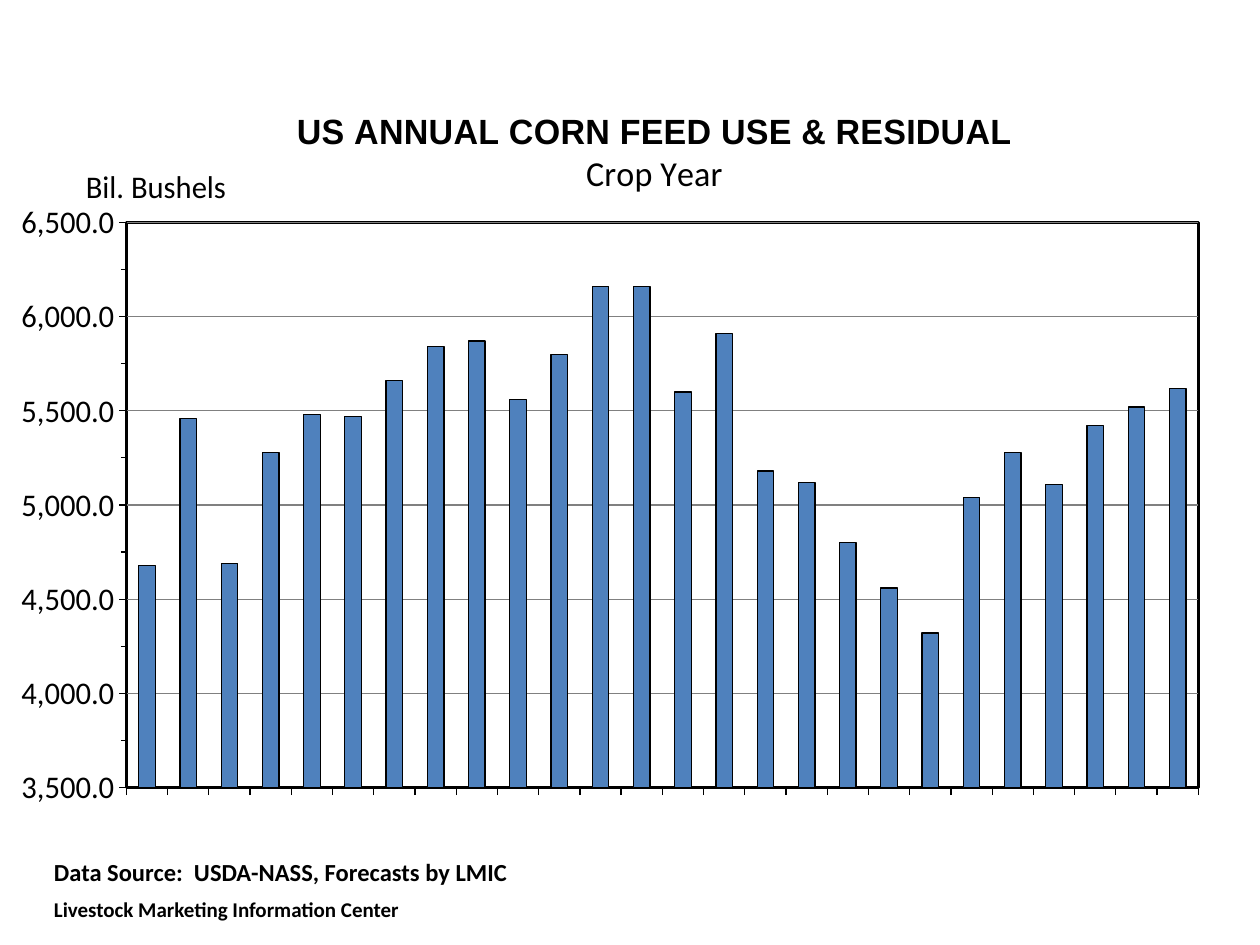
from lxml.etree import SubElement
from pptx import Presentation
from pptx.chart.data import CategoryChartData
from pptx.dml.color import RGBColor
from pptx.enum.chart import XL_CHART_TYPE, XL_TICK_LABEL_POSITION as LabelPos, XL_TICK_MARK as Tick
from pptx.enum.text import MSO_AUTO_SIZE
from pptx.oxml.ns import qn
from pptx.util import Inches, Pt

BLACK = RGBColor(0, 0, 0)
WHITE = RGBColor(255, 255, 255)
BLUE = RGBColor(0x4F, 0x81, 0xBD)
GRAY = RGBColor(0x80, 0x80, 0x80)

# Content: text, font, size, bold
TITLE = [("US ANNUAL CORN FEED USE & RESIDUAL", "Arial", 20, True),
         ("Crop Year", "Calibri", 20, False)]
AXIS_TITLE = [("Bil. Bushels", "Calibri", 18, False)]
SOURCE = [("Data Source:  USDA-NASS, Forecasts by LMIC", "Calibri", 14, True),
          ("Livestock Marketing Information Center", "Calibri", 12, True)]
FEED_USE = [4680, 5460, 4690, 5280, 5480, 5470, 5660, 5840, 5870, 5560, 5800, 6160, 6160,
            5600, 5910, 5180, 5120, 4800, 4560, 4320, 5040, 5280, 5110, 5420, 5520, 5620]


def write(tf, lines):
    for i, (text, name, size, bold) in enumerate(lines):
        p = tf.add_paragraph() if i else tf.paragraphs[0]
        r = p.add_run()
        r.text = text
        r.font.name, r.font.size, r.font.bold = name, Pt(size), bold
        r.font.color.rgb = BLACK


def set_line(line, color, width):
    line.color.rgb = color
    line.width = Pt(width)


def place(layout, **values):
    """Fill a c:layout element with a manual layout."""
    manual = SubElement(layout, qn("c:manualLayout"))
    for tag, val in values.items():
        SubElement(manual, qn(f"c:{tag}")).set("val", str(val))


prs = Presentation()
prs.slide_width, prs.slide_height = Inches(10), Inches(7.5)
s = prs.slides.add_slide(prs.slide_layouts[6])

# Column chart with unlabelled categories
data = CategoryChartData(number_format="#,##0.0")
data.categories = [""] * len(FEED_USE)
data.add_series("", FEED_USE)
chart = s.shapes.add_chart(XL_CHART_TYPE.COLUMN_CLUSTERED, Inches(0.17), Inches(0.67),
                           Inches(9.67), Inches(5.92), data).chart
chart.has_legend = False
chart.font.name, chart.font.size = "Calibri", Pt(18)
chart.font.color.rgb = BLACK

plot = chart.plots[0]
plot.gap_width = 150
plot.vary_by_categories = False
bars = plot.series[0].format
bars.fill.solid()
bars.fill.fore_color.rgb = BLUE
set_line(bars.line, BLACK, 0.75)

# Axes
crop_years, bushels = chart.category_axis, chart.value_axis
for axis in (crop_years, bushels):
    axis.major_tick_mark = Tick.OUTSIDE
    set_line(axis.format.line, BLACK, 0.75)
crop_years.tick_label_position = LabelPos.NONE
bushels.minor_tick_mark = Tick.OUTSIDE
bushels.minimum_scale, bushels.maximum_scale = 3500, 6500
bushels.major_unit, bushels.minor_unit = 500, 250
bushels.tick_labels.number_format = "#,##0.0"
bushels.tick_labels.number_format_is_linked = False
set_line(bushels.major_gridlines.format.line, GRAY, 0.75)

# Chart and axis titles
for title, lines, x, y in ((chart.chart_title, TITLE, 0.2, 0.03),
                           (bushels.axis_title, AXIS_TITLE, 0.02, 0.1)):
    write(title.text_frame, lines)
    place(title._element.find(qn("c:layout")), xMode="edge", yMode="edge", x=x, y=y)
body = bushels.axis_title._element.find(".//" + qn("a:bodyPr"))
body.set("rot", "0")
body.set("vert", "horz")

# Plot area: place and frame
area = chart._chartSpace.chart.plotArea
layout = area.find(qn("c:layout"))
if layout is None:
    layout = area.makeelement(qn("c:layout"))
    area.insert(0, layout)
place(layout, layoutTarget="inner", xMode="edge", yMode="edge",
      x=0.059, y=0.185, w=0.906, h=0.758)
frame = SubElement(area, qn("c:spPr"))
border = SubElement(frame, qn("a:ln"), w=str(Pt(2)))
for parent, color in ((frame, WHITE), (border, BLACK)):
    fill = parent.makeelement(qn("a:solidFill"))
    parent.insert(0, fill)
    SubElement(fill, qn("a:srgbClr"), val=str(color))

# Source note
tf = s.shapes.add_textbox(Inches(0.33), Inches(6.75), Inches(4.5), Inches(0.64)).text_frame
tf.word_wrap = True
tf.auto_size = MSO_AUTO_SIZE.SHAPE_TO_FIT_TEXT
write(tf, SOURCE)
tf.paragraphs[1].space_before = Pt(6)

prs.save("out.pptx")
